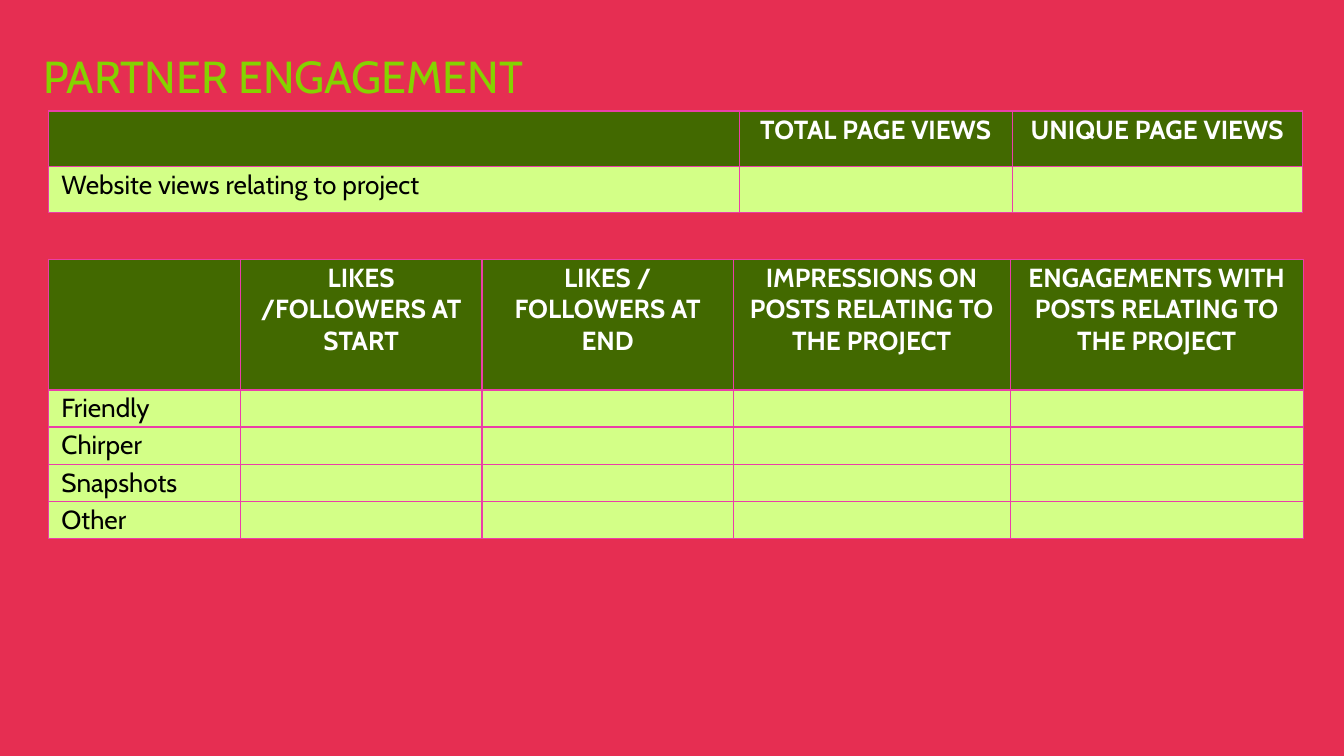
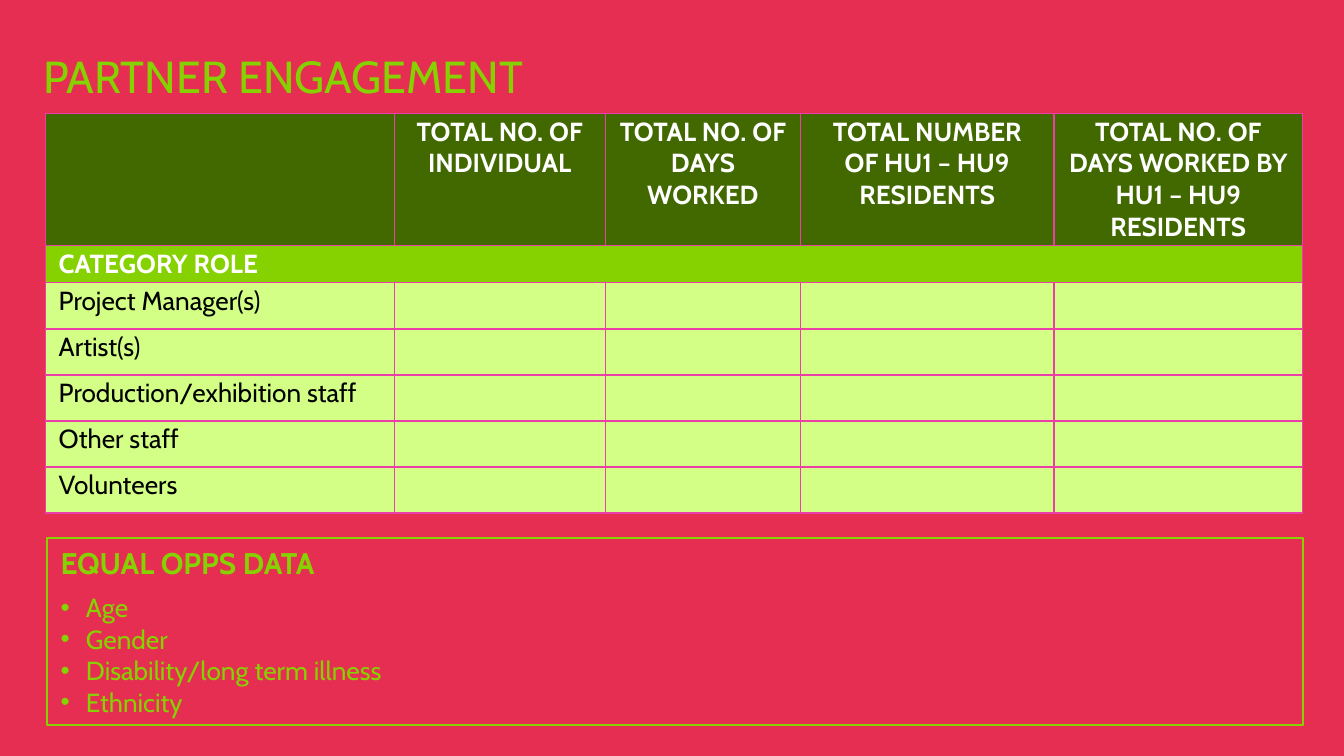
import pptx
import pptx.dml.color
import pptx.enum.text
import pptx.oxml.ns
from lxml import etree
from pptx.util import Cm, Pt

FONT = "Cabin"
RED, LIME, DARK_GREEN, PALE_GREEN = "E62E52", "85D200", "426900", "D3FF87"
PINK, WHITE, BLACK = "EB3EA8", "FFFFFF", "000000"
TITLE_ONLY, TITLE_AND_BODY = 5, 1
TITLE = "PARTNER ENGAGEMENT"

# Lengths in centimetres; each row is (height, style, texts).
WEBSITE_TABLE = {
    "left": 0.91, "top": 2.1,
    "columns": [13.06, 5.16, 5.48],
    "rows": [
        (1.04, "header", ["", "TOTAL PAGE VIEWS", "UNIQUE PAGE VIEWS"]),
        (0.87, "body", ["Website views relating to project"]),
    ],
}
SOCIAL_TABLE = {
    "left": 0.91, "top": 4.9,
    "columns": [3.63, 4.57, 4.75, 5.23, 5.54],
    "rows": [
        (2.47, "header", ["", "LIKES /FOLLOWERS AT START", "LIKES / FOLLOWERS AT END",
                          "IMPRESSIONS ON POSTS RELATING TO THE PROJECT",
                          "ENGAGEMENTS WITH POSTS RELATING TO THE PROJECT"]),
        *[(0.69, "body", [channel])
          for channel in ("Friendly", "Chirper", "Snapshots", "Other")],
    ],
}
STAFF_TABLE = {
    "left": 0.86, "top": 2.14,
    "columns": [6.59, 3.99, 3.69, 4.79, 4.7],
    "rows": [
        (2.47, "header", ["", "TOTAL NO. OF INDIVIDUAL", "TOTAL NO. OF DAYS WORKED",
                          "TOTAL NUMBER OF HU1 – HU9 RESIDENTS",
                          "TOTAL NO. OF DAYS WORKED BY HU1 – HU9 RESIDENTS"]),
        (0.69, "section", ["CATEGORY ROLE"]),
        *[(0.87, "body", [role])
          for role in ("Project Manager(s)", "Artist(s)", "Production/exhibition staff",
                       "Other staff", "Volunteers")],
    ],
}
EQUAL_OPPS_HEADING = "EQUAL OPPS DATA"
EQUAL_OPPS = ["Age", "Gender", "Disability/long term illness", "Ethnicity"]

# Fill, text colour, bold, alignment
ALIGN = pptx.enum.text.PP_ALIGN
ROW_STYLES = {
    "header": (DARK_GREEN, WHITE, True, ALIGN.CENTER),
    "section": (LIME, WHITE, True, ALIGN.LEFT),
    "body": (PALE_GREEN, BLACK, False, ALIGN.LEFT),
}


def rgb(hex_colour):
    return pptx.dml.color.RGBColor.from_string(hex_colour)


def place(shape, left, top, width, height):
    shape.left, shape.top = Cm(left), Cm(top)
    shape.width, shape.height = Cm(width), Cm(height)


def style_font(paragraph, size, colour, bold=False):
    font = paragraph.font
    font.name, font.size, font.bold = FONT, Pt(size), bold
    font.color.rgb = rgb(colour)


def add_borders(cell):
    properties = cell._tc.get_or_add_tcPr()
    for position, side in enumerate(("lnL", "lnR", "lnT", "lnB")):
        line = etree.Element(pptx.oxml.ns.qn(f"a:{side}"), w=str(Pt(0.75)))
        fill = etree.SubElement(line, pptx.oxml.ns.qn("a:solidFill"))
        etree.SubElement(fill, pptx.oxml.ns.qn("a:srgbClr"), val=PINK)
        properties.insert(position, line)


def fill_cell(cell, text, style):
    fill, colour, bold, alignment = ROW_STYLES[style]
    cell.fill.solid()
    cell.fill.fore_color.rgb = rgb(fill)
    cell.margin_left = cell.margin_right = Cm(0.25)
    cell.margin_top = cell.margin_bottom = Cm(0.05)
    add_borders(cell)
    paragraph = cell.text_frame.paragraphs[0]
    if text:
        paragraph.text = text
        paragraph.alignment = alignment
        style_font(paragraph, 14, colour, bold)
    else:  # keeps an empty cell from stretching its row
        etree.SubElement(paragraph._p, pptx.oxml.ns.qn("a:endParaRPr"), sz="1400")


def add_table(slide, content):
    columns, rows = content["columns"], content["rows"]
    table = slide.shapes.add_table(
        len(rows), len(columns), Cm(content["left"]), Cm(content["top"]),
        Cm(sum(columns)), Cm(sum(height for height, _, _ in rows))).table
    table.first_row = table.horz_banding = False
    for column, width in zip(table.columns, columns):
        column.width = Cm(width)
    for row_index, (height, style, texts) in enumerate(rows):
        table.rows[row_index].height = Cm(height)
        padded = texts + [""] * (len(columns) - len(texts))
        for column_index, text in enumerate(padded):
            fill_cell(table.cell(row_index, column_index), text, style)
        if style == "section":
            table.cell(row_index, 0).merge(table.cell(row_index, len(columns) - 1))


def add_slide(presentation, layout_index):
    slide = presentation.slides.add_slide(presentation.slide_layouts[layout_index])
    frame = slide.shapes.title.text_frame
    frame.text = TITLE
    frame.auto_size = pptx.enum.text.MSO_AUTO_SIZE.NONE
    frame.paragraphs[0].alignment = ALIGN.LEFT
    style_font(frame.paragraphs[0], 24, LIME)
    return slide


def fill_equal_opps(body):
    place(body, 0.89, 10.17, 23.73, 3.53)
    body.line.color.rgb = rgb(LIME)
    body.line.width = Pt(1)
    frame = body.text_frame
    frame.auto_size = pptx.enum.text.MSO_AUTO_SIZE.NONE
    frame.text = "\n".join([EQUAL_OPPS_HEADING, *EQUAL_OPPS])
    for index, paragraph in enumerate(frame.paragraphs):
        is_heading = index == 0
        indent = 0 if is_heading else Cm(0.48)
        properties = paragraph._p.get_or_add_pPr()
        properties.set("marL", str(indent))
        properties.set("indent", str(-indent))
        paragraph.space_before = Pt(0)
        paragraph.space_after = Pt(6 if is_heading else 0)
        if is_heading:
            etree.SubElement(properties, pptx.oxml.ns.qn("a:buNone"))
        style_font(paragraph, 16 if is_heading else 14, LIME, is_heading)


def main():
    presentation = pptx.Presentation()
    presentation.slide_width, presentation.slide_height = Cm(25.4), Cm(14.29)
    master = presentation.slide_master
    master.background.fill.solid()
    master.background.fill.fore_color.rgb = rgb(RED)
    place(master.placeholders[0], 0.56, 0.79, 22.83, 1.27)

    online_slide = add_slide(presentation, TITLE_ONLY)
    add_table(online_slide, WEBSITE_TABLE)
    add_table(online_slide, SOCIAL_TABLE)

    staff_slide = add_slide(presentation, TITLE_AND_BODY)
    add_table(staff_slide, STAFF_TABLE)
    fill_equal_opps(staff_slide.placeholders[1])

    presentation.save("out.pptx")


if __name__ == "__main__":
    main()
